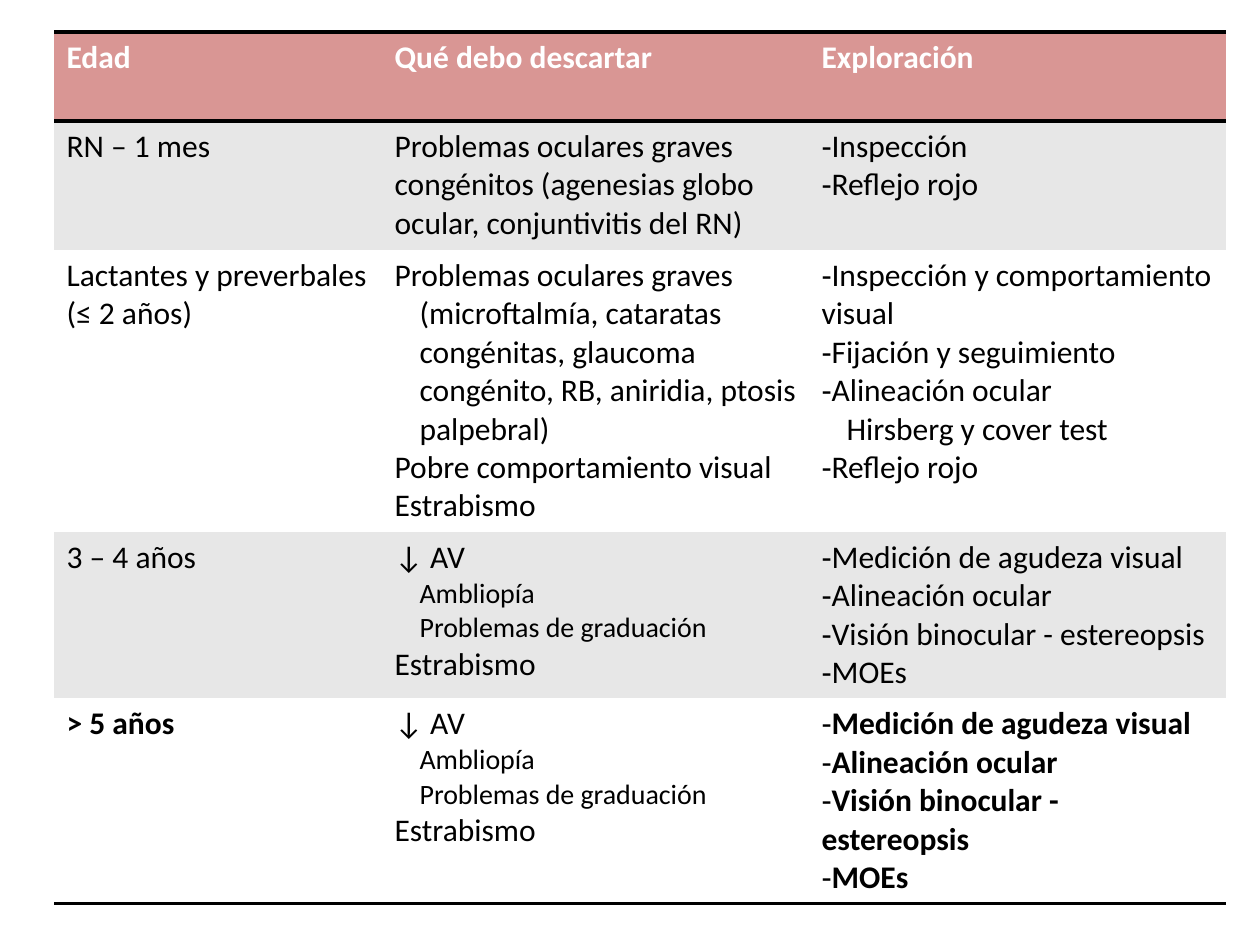
"""Build a slide with a table of eye examinations by age."""
from lxml import etree
from pptx import Presentation, util as u
from pptx.dml.color import RGBColor
from pptx.oxml import ns

PX = 914400 / 126
FONT = "Calibri"
COLORS = {"header": "D99694", "band": "E7E7E7", "plain": "FFFFFF",
          "ink": "000000", "header_ink": "FFFFFF"}
COLUMN_WIDTHS = [328, 427, 417]
ROW_HEIGHTS = [89, 129, 282, 166, 204]
HEADINGS = ["Edad", "Qué debo descartar", "Exploración"]
LOW_ACUITY = ["↓ AV", ">>Ambliopía", ">>Problemas de graduación", "Estrabismo"]
ACUITY_EXAM = ["-Medición de agudeza visual", "-Alineación ocular",
               "-Visión binocular - estereopsis", "-MOEs"]
AGES = [
    (["RN – 1 mes"],
     ["Problemas oculares graves congénitos (agenesias globo ocular, "
      "conjuntivitis del RN)"],
     ["-Inspección", "-Reflejo rojo"]),
    (["Lactantes y preverbales", "(≤ 2 años)"],
     ["Problemas oculares graves",
      ">(microftalmía, cataratas congénitas, glaucoma congénito, RB, "
      "aniridia, ptosis palpebral)",
      "Pobre comportamiento visual", "Estrabismo"],
     ["-Inspección y comportamiento visual", "-Fijación y seguimiento",
      "-Alineación ocular", ">Hirsberg y cover test", "-Reflejo rojo"]),
    (["3 – 4 años"], LOW_ACUITY, ACUITY_EXAM),
    (["> 5 años"], LOW_ACUITY, ACUITY_EXAM),
]


def px(length):
    """Turn pixels into EMU."""
    return u.Emu(round(length * PX))


def write(paragraph, content, size=18, bold=False, color="ink", indent=0, bullet=None):
    """Write one formatted paragraph."""
    run = paragraph.add_run()
    run.text = content
    run.font.name = FONT
    run.font.size = u.Pt(size)
    run.font.bold = bold
    run.font.color.rgb = RGBColor.from_string(COLORS[color])
    properties = paragraph._p.get_or_add_pPr()
    properties.set("marL", str(px(indent)))
    properties.set("indent", "0")
    if bullet:
        etree.SubElement(properties, ns.qn("a:buFont"), typeface=FONT)
        etree.SubElement(properties, ns.qn("a:buChar"), char=bullet)
    else:
        etree.SubElement(properties, ns.qn("a:buNone"))


def write_line(paragraph, line, **style):
    """Write a line whose leading mark means bullet, indent or small indent."""
    if line.startswith("-"):
        write(paragraph, line[1:], bullet="‐", **style)
    elif line.startswith(">>"):
        write(paragraph, line[2:], size=16, indent=25, **style)
    elif line.startswith(">") and not line.startswith("> "):
        write(paragraph, line[1:], indent=25, **style)
    else:
        write(paragraph, line, **style)


def add_borders(cell, ruled_sides):
    """Draw the ruled sides of a cell and leave the others bare."""
    properties = cell._tc.get_or_add_tcPr()
    for side in "LRTB":
        ruled = side in ruled_sides
        border = etree.SubElement(properties, ns.qn(f"a:ln{side}"),
                                  w=str(u.Pt(2) if ruled else 0))
        paint = etree.SubElement(border, ns.qn("a:solidFill" if ruled else "a:noFill"))
        if ruled:
            etree.SubElement(paint, ns.qn("a:srgbClr"), val=COLORS["ink"])


def fill_cell(cell, lines, fill, ruled_sides="", **style):
    """Give a cell its borders, fill and paragraphs."""
    add_borders(cell, ruled_sides)
    cell.fill.solid()
    cell.fill.fore_color.rgb = RGBColor.from_string(COLORS[fill])
    frame = cell.text_frame
    for index, line in enumerate(lines):
        paragraph = frame.add_paragraph() if index else frame.paragraphs[0]
        write_line(paragraph, line, **style)


def add_age_table(slide):
    """Add the table with its header row and one row for each age."""
    frame = slide.shapes.add_table(
        len(ROW_HEIGHTS), len(COLUMN_WIDTHS), px(54), px(32),
        px(sum(COLUMN_WIDTHS)), px(sum(ROW_HEIGHTS)))
    table = frame.table
    table.first_row = table.horz_banding = False
    for column, width in zip(table.columns, COLUMN_WIDTHS):
        column.width = px(width)
    for row, height in zip(table.rows, ROW_HEIGHTS):
        row.height = px(height)
    for column, heading in enumerate(HEADINGS):
        fill_cell(table.cell(0, column), [heading], "header", "TB",
                  bold=True, color="header_ink")
    for row, age in enumerate(AGES, 1):
        last = row == len(AGES)
        sides = "T" * (row == 1) + "B" * last
        for column, lines in enumerate(age):
            fill_cell(table.cell(row, column), lines, "band" if row % 2 else "plain",
                      sides, bold=last and column != 1)


def main():
    """Create and save the presentation."""
    presentation = Presentation()
    presentation.slide_width = px(1260)
    presentation.slide_height = px(945)
    add_age_table(presentation.slides.add_slide(presentation.slide_layouts[6]))
    presentation.save("out.pptx")


if __name__ == "__main__":
    main()
